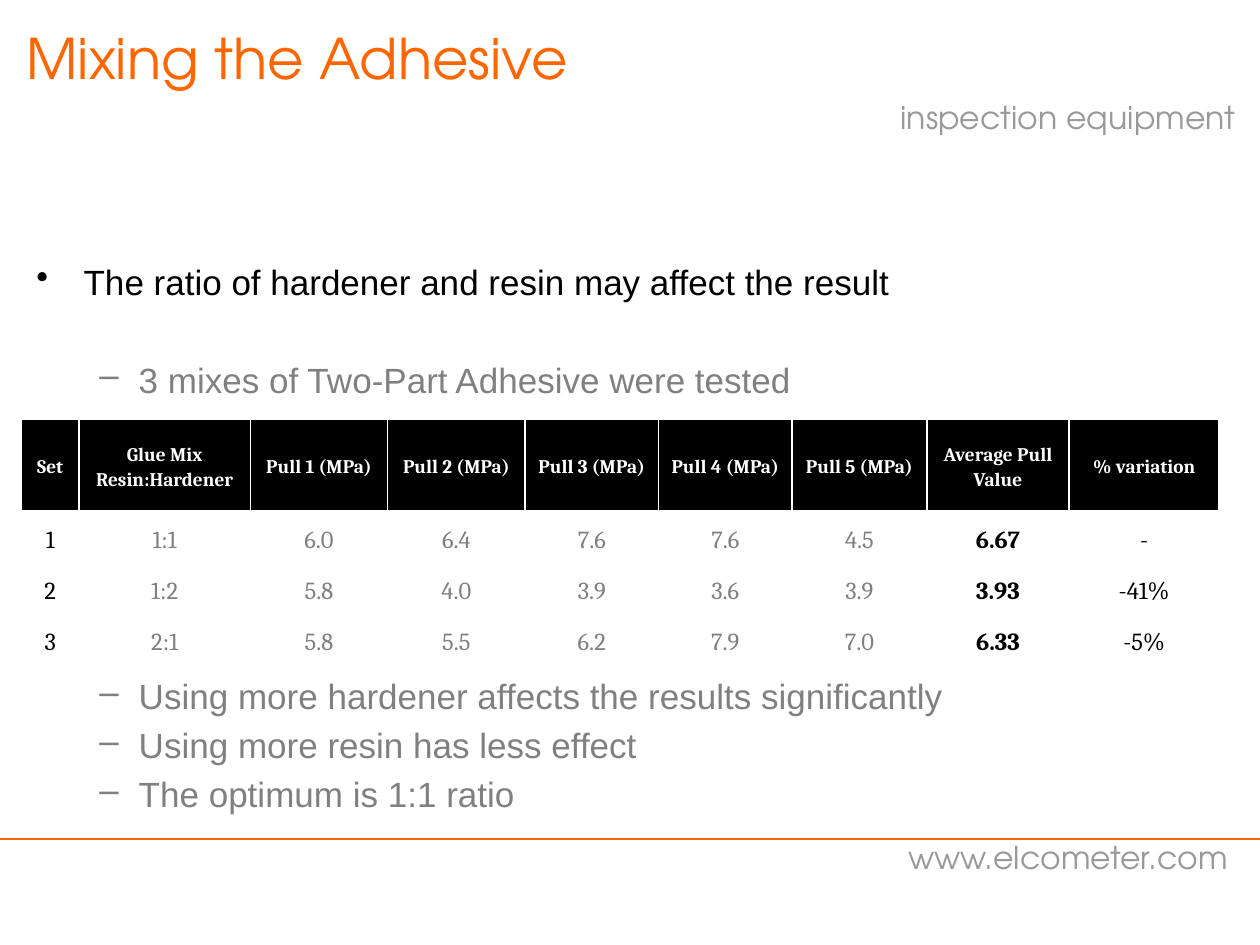
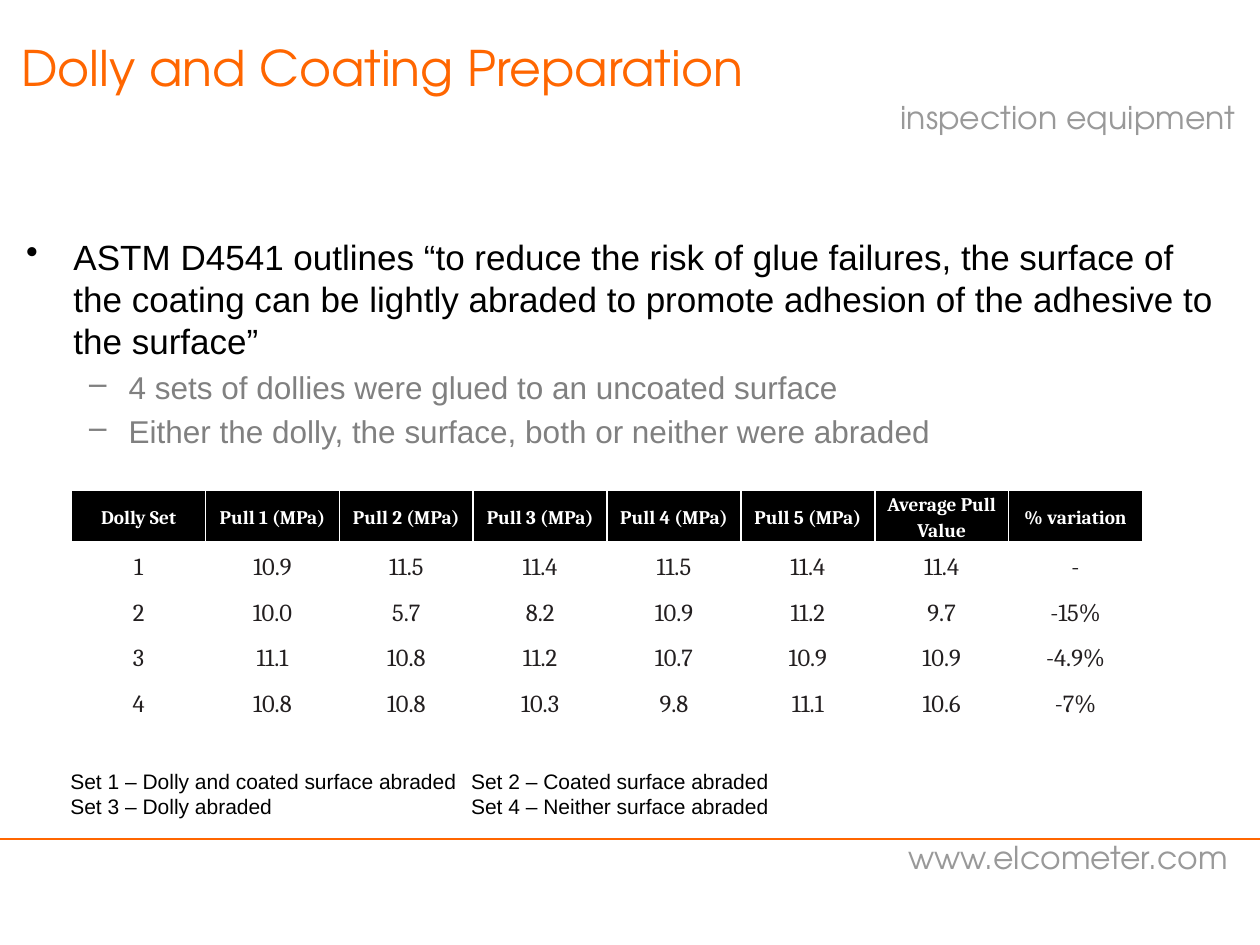
import dataclasses
import typing

import lxml.etree
import pptx
import pptx.dml.color
import pptx.enum.shapes
import pptx.enum.text
import pptx.oxml.ns
import pptx.util

Pt = pptx.util.Pt
ORANGE, GREY, MID_GREY = "FF6600", "999999", "808080"
BLACK, WHITE, CHARCOAL = "000000", "FFFFFF", "231F20"
DISPLAY, BODY, TABLE = "TeX Gyre Adventor", "Arial", "Cambria"
LEFT = pptx.enum.text.PP_ALIGN.LEFT
CENTER = pptx.enum.text.PP_ALIGN.CENTER
TOP = pptx.enum.text.MSO_ANCHOR.TOP
MIDDLE = pptx.enum.text.MSO_ANCHOR.MIDDLE


class Box(typing.NamedTuple):
    left: float
    top: float
    width: float
    height: float


class Style(typing.NamedTuple):
    font: str
    size: float
    color: str
    bold: bool = False


class Level(typing.NamedTuple):
    bullet: str
    margin: float
    indent: float
    color: str


class Point(typing.NamedTuple):
    text: str
    level: Level
    size: float = 20
    space: float = 4


class Column(typing.NamedTuple):
    heading: str
    width: float
    color: str
    bold: bool = False


@dataclasses.dataclass
class ResultTable:
    left: float
    top: float
    heading_height: float
    row_height: float
    columns: list[Column]
    results: list[list[str]]


@dataclasses.dataclass
class Lesson:
    title: str
    title_box: Box
    title_size: float
    title_inset: float
    body_box: Box
    points: list[Point]
    table: ResultTable


MAIN = Level("•", 27, -27, BLACK)
SUB = Level("–", 58.5, -22.5, MID_GREY)
TAG = Style(DISPLAY, 18, GREY)
HEADING = Style(TABLE, 11, WHITE, True)
LEGEND = Style(BODY, 12, BLACK)
TAGS = {
    "inspection equipment": Box(507.6, 52.6, 213.8, 38.9),
    "www.elcometer.com": Box(511.9, 475.2, 213.8, 38.9),
}
FOOTER_RULE_Y = 479.5
PULL_NAMES = [f"Pull {number} (MPa)" for number in range(1, 6)]
LEGEND_BOX = Box(33.1, 435.6, 648.7, 36.7)
LEGEND_TAB = 229
LEGEND_ROWS = [
    "Set 1 – Dolly and coated surface abraded\tSet 2 – Coated surface abraded",
    "Set 3 – Dolly abraded\tSet 4 – Neither surface abraded",
]

MIXING = Lesson(
    "Mixing the Adhesive", Box(7.9, 10.1, 704.9, 85), 32, 3.6,
    Box(13.7, 145.4, 691.9, 357.1),
    [
        Point("The ratio of hardener and resin may affect the result", MAIN, space=0),
        Point("3 mixes of Two-Part Adhesive were tested", SUB, space=32),
        Point("Using more hardener affects the results significantly", SUB, space=156.6),
        Point("Using more resin has less effect", SUB),
        Point("The optimum is 1:1 ratio", SUB),
    ],
    ResultTable(
        12.2, 239.8, 53, 29.2,
        [
            Column("Set", 33, BLACK),
            Column("Glue Mix Resin:Hardener", 97.9, MID_GREY),
            *(Column(name, width, MID_GREY)
              for name, width in zip(PULL_NAMES, [78.5, 78.5, 76.3, 76.3, 77])),
            Column("Average Pull Value", 81.4, BLACK, True),
            Column("% variation", 85.7, BLACK),
        ],
        [
            ["1", "1:1", "6.0", "6.4", "7.6", "7.6", "4.5", "6.67", "-"],
            ["2", "1:2", "5.8", "4.0", "3.9", "3.6", "3.9", "3.93", "-41%"],
            ["3", "2:1", "5.8", "5.5", "6.2", "7.9", "7.0", "6.33", "-5%"],
        ],
    ),
)

PREPARATION = Lesson(
    "Dolly and Coating Preparation", Box(5, 12.2, 704.9, 85), 28, 9.5,
    Box(7.9, 131, 701.3, 357.1),
    [
        Point("ASTM D4541 outlines “to reduce the risk of glue failures, the surface of "
              "the coating can be lightly abraded to promote adhesion of the adhesive to "
              "the surface”", MAIN, space=0),
        Point("4 sets of dollies were glued to an uncoated surface", SUB, 18, 3.6),
        Point("Either the dolly, the surface, both or neither were abraded", SUB, 18, 3.6),
    ],
    ResultTable(
        41, 280, 30.2, 26,
        [Column(name, 76.5, CHARCOAL)
         for name in ["Dolly Set", *PULL_NAMES, "Average Pull Value", "% variation"]],
        [
            ["1", "10.9", "11.5", "11.4", "11.5", "11.4", "11.4", "-"],
            ["2", "10.0", "5.7", "8.2", "10.9", "11.2", "9.7", "-15%"],
            ["3", "11.1", "10.8", "11.2", "10.7", "10.9", "10.9", "-4.9%"],
            ["4", "10.8", "10.8", "10.3", "9.8", "11.1", "10.6", "-7%"],
        ],
    ),
)


def rgb(value: str) -> pptx.dml.color.RGBColor:
    return pptx.dml.color.RGBColor.from_string(value)


def set_format(target: typing.Any, values: dict[str, typing.Any]) -> None:
    for name, value in values.items():
        setattr(target, name, value)


def points(box: Box) -> list[pptx.util.Length]:
    return [Pt(length) for length in box]


def add_element(parent: typing.Any, tag: str, **attributes: str) -> typing.Any:
    return lxml.etree.SubElement(parent, pptx.oxml.ns.qn(tag), attributes)


def write(paragraph: typing.Any, text: str, style: Style, **values: typing.Any) -> None:
    set_format(paragraph, values)
    run = paragraph.add_run()
    run.text = text
    set_format(run.font, {"name": style.font, "size": Pt(style.size), "bold": style.bold})
    run.font.color.rgb = rgb(style.color)


def add_text_frame(slide: typing.Any, box: Box) -> typing.Any:
    frame = slide.shapes.add_textbox(*points(box)).text_frame
    set_format(frame, {"word_wrap": True, "vertical_anchor": TOP})
    return frame


def next_paragraph(frame: typing.Any, index: int) -> typing.Any:
    return frame.add_paragraph() if index else frame.paragraphs[0]


def draw_shared(slide: typing.Any) -> None:
    for text, box in TAGS.items():
        write(add_text_frame(slide, box).paragraphs[0], text, TAG)
    rule = slide.shapes.add_connector(
        pptx.enum.shapes.MSO_CONNECTOR.STRAIGHT,
        Pt(720), Pt(FOOTER_RULE_Y), Pt(0), Pt(FOOTER_RULE_Y))
    rule.line.color.rgb = rgb(ORANGE)
    rule.line.width = Pt(0.75)
    add_element(rule._element.spPr, "a:effectLst")


def draw_title(slide: typing.Any, lesson: Lesson) -> None:
    title = slide.shapes.title
    set_format(title, dict(zip(["left", "top", "width", "height"], points(lesson.title_box))))
    set_format(title.text_frame, {
        "word_wrap": True,
        "auto_size": pptx.enum.text.MSO_AUTO_SIZE.NONE,
        "vertical_anchor": TOP,
        "margin_top": Pt(lesson.title_inset),
    })
    write(title.text_frame.paragraphs[0], lesson.title,
          Style(DISPLAY, lesson.title_size, ORANGE), alignment=LEFT)


def draw_points(slide: typing.Any, lesson: Lesson) -> None:
    frame = add_text_frame(slide, lesson.body_box)
    for index, point in enumerate(lesson.points):
        paragraph = next_paragraph(frame, index)
        level = point.level
        properties = paragraph._p.get_or_add_pPr()
        properties.set("marL", str(Pt(level.margin)))
        properties.set("indent", str(Pt(level.indent)))
        add_element(properties, "a:buChar", char=level.bullet)
        write(paragraph, point.text, Style(BODY, point.size, level.color),
              space_before=Pt(point.space))


def draw_cell(cell: typing.Any, text: str, style: Style, is_heading: bool) -> None:
    set_format(cell, {"vertical_anchor": MIDDLE, "margin_left": Pt(5), "margin_right": Pt(5),
                      "margin_top": 0, "margin_bottom": 0})
    write(cell.text_frame.paragraphs[0], text, style, alignment=CENTER, line_spacing=1.15)
    properties = cell._tc.get_or_add_tcPr()
    for side in ["L", "R", "T", "B"]:
        width = 3 if is_heading and side == "B" else 1
        border = add_element(properties, f"a:ln{side}", w=str(Pt(width)))
        add_element(add_element(border, "a:solidFill"), "a:srgbClr", val=WHITE)
    if is_heading:
        cell.fill.solid()
        cell.fill.fore_color.rgb = rgb(BLACK)
    else:
        cell.fill.background()


def draw_table(slide: typing.Any, data: ResultTable) -> None:
    rows = [[column.heading for column in data.columns], *data.results]
    heights = [data.heading_height] + [data.row_height] * len(data.results)
    box = Box(data.left, data.top, sum(column.width for column in data.columns), sum(heights))
    table = slide.shapes.add_table(len(rows), len(data.columns), *points(box)).table
    set_format(table, {"first_row": False, "horz_banding": False})
    for table_column, column in zip(table.columns, data.columns):
        table_column.width = Pt(column.width)
    for row_index, (texts, height) in enumerate(zip(rows, heights)):
        table.rows[row_index].height = Pt(height)
        for column_index, (text, column) in enumerate(zip(texts, data.columns)):
            is_heading = row_index == 0
            style = HEADING if is_heading else Style(TABLE, 14, column.color, column.bold)
            draw_cell(table.cell(row_index, column_index), text, style, is_heading)


def draw_legend(slide: typing.Any) -> None:
    frame = add_text_frame(slide, LEGEND_BOX)
    for index, text in enumerate(LEGEND_ROWS):
        paragraph = next_paragraph(frame, index)
        tabs = add_element(paragraph._p.get_or_add_pPr(), "a:tabLst")
        add_element(tabs, "a:tab", pos=str(Pt(LEGEND_TAB)), algn="l")
        write(paragraph, text, LEGEND)


def draw_lesson(deck: typing.Any, lesson: Lesson) -> typing.Any:
    slide = deck.slides.add_slide(deck.slide_layouts[5])
    draw_shared(slide)
    draw_title(slide, lesson)
    draw_points(slide, lesson)
    draw_table(slide, lesson.table)
    return slide


def main() -> None:
    deck = pptx.Presentation()
    set_format(deck, {"slide_width": Pt(720), "slide_height": Pt(540)})
    draw_lesson(deck, MIXING)
    draw_legend(draw_lesson(deck, PREPARATION))
    deck.save("out.pptx")


if __name__ == "__main__":
    main()
